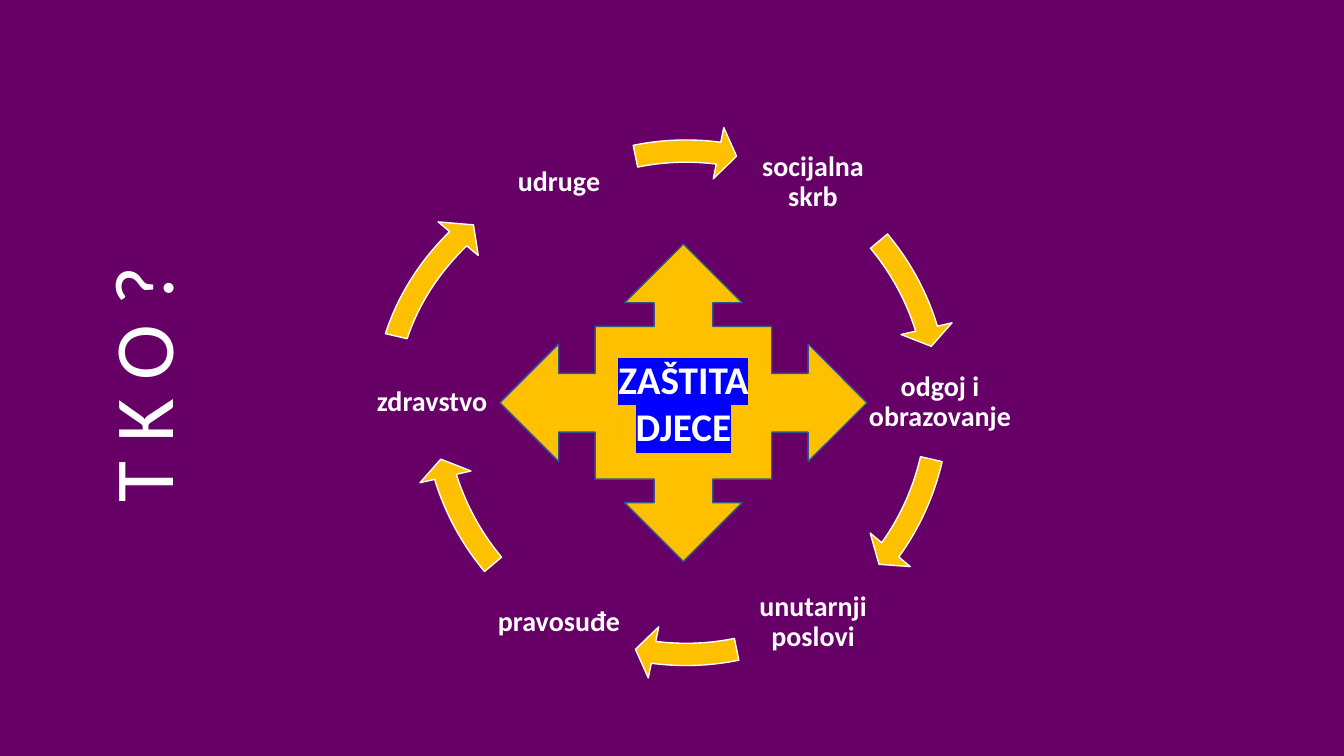
import math
from pptx import Presentation
from pptx.dml.color import RGBColor
from pptx.enum import shapes, text
from pptx.oxml import parse_xml
from pptx.oxml.ns import nsdecls
from pptx.util import Cm, Pt

PURPLE = RGBColor(0x66, 0x00, 0x66)
GOLD = RGBColor(0xFF, 0xC0, 0x00)
WHITE = RGBColor(0xFF, 0xFF, 0xFF)
NAVY = RGBColor(0x32, 0x54, 0x91)
BLUE = RGBColor(0x00, 0x00, 0xFF)


def write(shape, words, size=20, bold=True, align=text.PP_ALIGN.CENTER,
          anchor=text.MSO_ANCHOR.MIDDLE, inset=0.25, space=1.0, mark=None):
    frame = shape.text_frame
    frame.word_wrap = True
    frame.auto_size = text.MSO_AUTO_SIZE.NONE
    frame.vertical_anchor = anchor
    frame.margin_left = frame.margin_right = Cm(inset)
    frame.margin_top = frame.margin_bottom = Cm(inset / 2)
    para = frame.paragraphs[0]
    para.alignment = align
    para.line_spacing = space
    run = para.add_run()
    run.text = words
    font = run.font
    font.name = "Calibri"
    font.size = Pt(size)
    font.bold = bold
    font.color.rgb = WHITE
    if mark:
        glow = parse_xml(f'<a:highlight {nsdecls("a")}><a:srgbClr val="{mark}"/></a:highlight>')
        font.fill._xPr.solidFill.addnext(glow)


def draw(kind, left, top, width, height, edge):
    shape = slide.shapes.add_shape(kind, Cm(left), Cm(top), Cm(width), Cm(height))
    shape.shadow.inherit = False
    shape.fill.solid()
    shape.fill.fore_color.rgb = GOLD
    shape.line.color.rgb = edge
    shape.line.width = Pt(1)
    return shape


deck = Presentation()
deck.slide_width, deck.slide_height = Cm(33.87), Cm(19.05)
slide = deck.slides.add_slide(deck.slide_layouts[5])
slide.background.fill.solid()
slide.background.fill.fore_color.rgb = PURPLE

title = slide.shapes.title
title.left, title.top, title.width, title.height = Cm(-0.2), Cm(7.77), Cm(7.47), Cm(2.82)
title.rotation = 270
write(title, "T K O ?", size=60, bold=False, align=text.PP_ALIGN.LEFT,
      anchor=text.MSO_ANCHOR.TOP)

MID_X, MID_Y, RADIUS, RING = 17.29, 10.15, 6.4, 14
labels = ["socijalna skrb", "odgoj i obrazovanje", "unutarnji poslovi",
          "pravosuđe", "zdravstvo", "udruge"]
spans = [(-17.12, -39.94), (35.76, 12.95), (97.42, 78.41)]

for i, label in enumerate(labels):
    angle = math.radians(60 * i - 60)
    wide = 4.47 if i == 1 else 3.84
    high = 2.87
    left = MID_X + RADIUS * math.cos(angle) - wide / 2
    top = MID_Y + RADIUS * math.sin(angle) - high / 2
    box = slide.shapes.add_textbox(Cm(left), Cm(top), Cm(wide), Cm(high))
    write(box, label, inset=0.08, space=0.9)

    span = 16.46 if i == 4 else RING
    arrow = draw(shapes.MSO_SHAPE.CIRCULAR_ARROW, MID_X - span / 2,
                 MID_Y - RING / 2, span, RING, WHITE)
    head, tail = [(deg + 180 * (i // 3)) % 360 * 0.6 for deg in spans[i % 3]]
    for n, value in enumerate([0.04, 2.5, head, tail, 0.047]):
        arrow.adjustments[n] = value

core = draw(shapes.MSO_SHAPE.QUAD_ARROW_CALLOUT, 12.6, 6.15, 9.25, 8, NAVY)
write(core, "ZAŠTITA DJECE", size=28, mark=BLUE)

deck.save("out.pptx")
